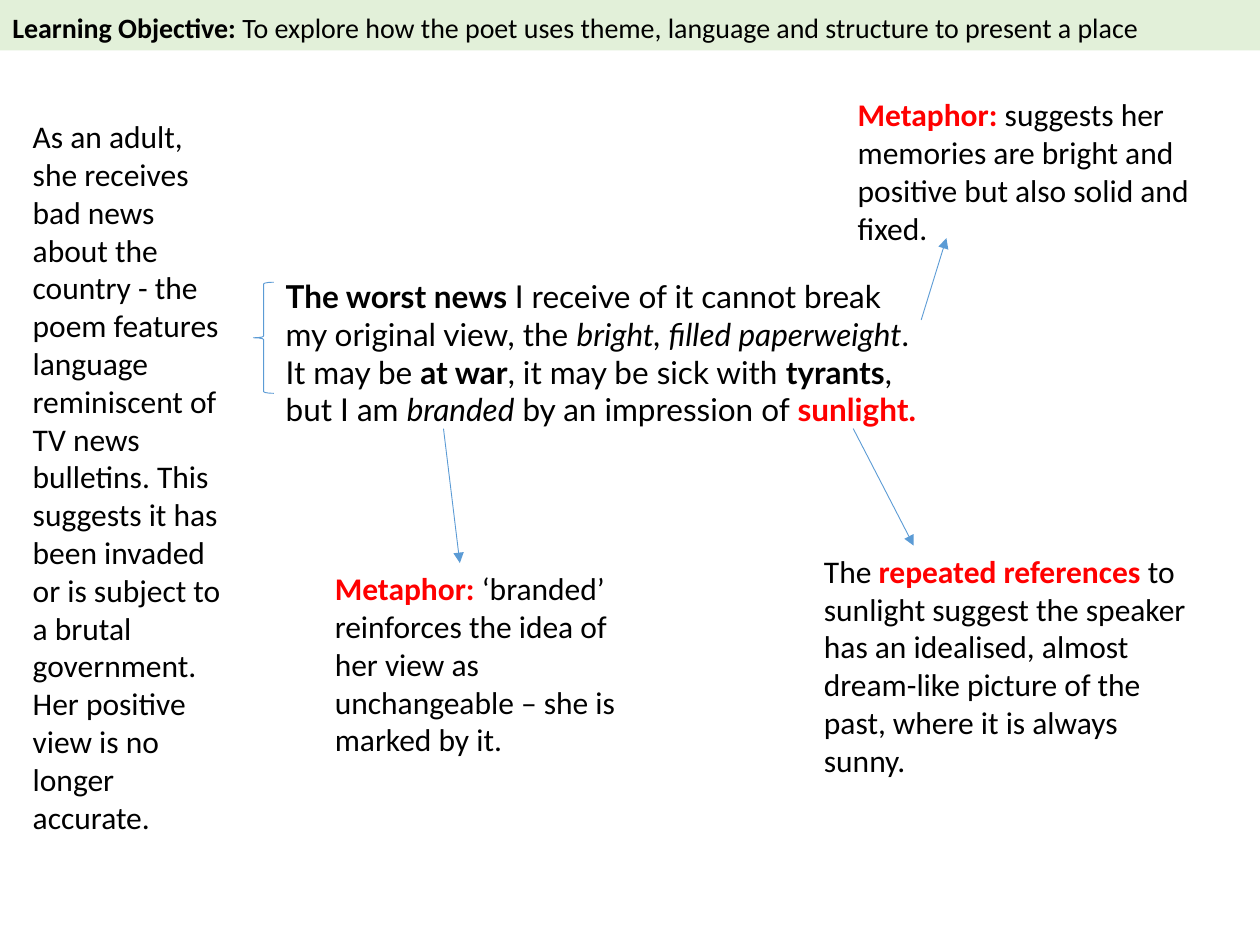
"""Build a slide of notes on the last verse of a poem."""
from lxml import etree
from pptx import Presentation
from pptx.dml.color import RGBColor
from pptx.enum.shapes import MSO_CONNECTOR, MSO_SHAPE
from pptx.enum.text import MSO_ANCHOR, MSO_AUTO_SIZE, PP_ALIGN
from pptx.oxml.ns import qn
from pptx.util import Cm, Pt

BRACE, RECT = MSO_SHAPE.LEFT_BRACE, MSO_SHAPE.RECTANGLE
STRAIGHT = MSO_CONNECTOR.STRAIGHT
TOP, LEFT = MSO_ANCHOR.TOP, PP_ALIGN.LEFT
GROW = MSO_AUTO_SIZE.SHAPE_TO_FIT_TEXT

THEME = {
    "ink": RGBColor(0, 0, 0),
    "red": RGBColor(0xFF, 0, 0),
    "blue": RGBColor(0x5B, 0x9B, 0xD5),
    "green": RGBColor(0xE2, 0xF0, 0xD9),
    "font": "Calibri",
    "verse": "Lato",
    "body": Pt(18),
    "head": Pt(16),
    "line": Pt(0.5),
}

SIZE = (25.4, 19.05)
GOAL = [[
    ("Learning Objective: ", "bold"),
    ("To explore how the poet uses theme, language and structure to present a place", ""),
]]
VERSE = [
    [("The worst news ", "bold"), ("I receive of it cannot break", "")],
    [("my original view, the ", ""), ("bright, filled paperweight", "slant"), (".", "")],
    [("It may be ", ""), ("at war", "bold"), (", it may be sick with ", ""),
     ("tyrants", "bold"), (",", "")],
    [("but I am ", ""), ("branded", "slant"), (" by an impression of ", ""),
     ("sunlight.", "key")],
]
NOTES = [
    ((0.41, 2.24, 4.29, 14.88), [
        ("As an adult, she receives bad news about the country - the poem features "
         "language reminiscent of TV news bulletins. This suggests it has been invaded "
         "or is subject to a brutal government. Her positive view is no longer accurate.", ""),
    ]),
    ((17.04, 1.8, 7.98, 3.33), [
        ("Metaphor: ", "key"),
        ("suggests her memories are bright and positive but also solid and fixed.", ""),
    ]),
    ((6.5, 11.35, 6.43, 4.11), [
        ("Metaphor: ", "key"),
        ("‘branded’ reinforces the idea of her view as unchangeable – she is marked by it.", ""),
    ]),
    ((16.36, 11, 7.82, 4.88), [
        ("The ", ""),
        ("repeated references ", "key"),
        ("to sunlight suggest the speaker has an idealised, almost dream-like picture "
         "of the past, where it is always sunny.", ""),
    ]),
]
ARROWS = [
    (18.57, 6.45, 19.08, 4.8),
    (8.94, 8.64, 9.27, 11.35),
    (17.2, 8.64, 18.42, 11),
]


def place(spot):
    return [Cm(part) for part in spot]


def write(shape, lines, font=THEME["font"], size=THEME["body"]):
    frame = shape.text_frame
    frame.word_wrap = True
    frame.vertical_anchor = TOP
    para = frame.paragraphs[0]
    para.alignment = LEFT
    for row, line in enumerate(lines):
        if row:
            para.add_line_break()
        for text, style in line:
            run = para.add_run()
            run.text = text
            run.font.name, run.font.size = font, size
            run.font.bold = style in ("bold", "key")
            run.font.italic = style == "slant"
            run.font.color.rgb = THEME["red" if style == "key" else "ink"]


def add_text(slide, spot, lines, **look):
    box = slide.shapes.add_textbox(*place(spot))
    write(box, lines, **look)
    box.text_frame.auto_size = GROW


def add_arrow(slide, ends):
    arrow = slide.shapes.add_connector(STRAIGHT, *place(ends))
    arrow.line.color.rgb = THEME["blue"]
    arrow.line.width = THEME["line"]
    etree.SubElement(arrow.line._get_or_add_ln(), qn("a:tailEnd"), type="triangle")
    etree.SubElement(arrow._element.spPr, qn("a:effectLst"))


def add_brace(slide, spot):
    brace = slide.shapes.add_shape(BRACE, *place(spot))
    brace.shadow.inherit = False
    brace.fill.background()
    brace.line.color.rgb = THEME["blue"]
    brace.line.width = THEME["line"]


def add_band(slide, spot, lines):
    band = slide.shapes.add_shape(RECT, *place(spot))
    band.shadow.inherit = False
    band.fill.solid()
    band.fill.fore_color.rgb = THEME["green"]
    band.line.fill.background()
    write(band, lines, size=THEME["head"])
    band.text_frame.margin_top = Cm(0.22)


def main():
    deck = Presentation()
    deck.slide_width, deck.slide_height = place(SIZE)
    slide = deck.slides.add_slide(deck.slide_layouts[6])
    add_text(slide, (5.51, 5.46, 15.09, 3.33), VERSE, font=THEME["verse"])
    add_brace(slide, (5.11, 5.69, 0.41, 2.24))
    for spot, note in NOTES:
        add_text(slide, spot, [note])
    for ends in ARROWS:
        add_arrow(slide, ends)
    add_band(slide, (0, 0, SIZE[0], 1.02), GOAL)
    deck.save("out.pptx")


if __name__ == "__main__":
    main()
